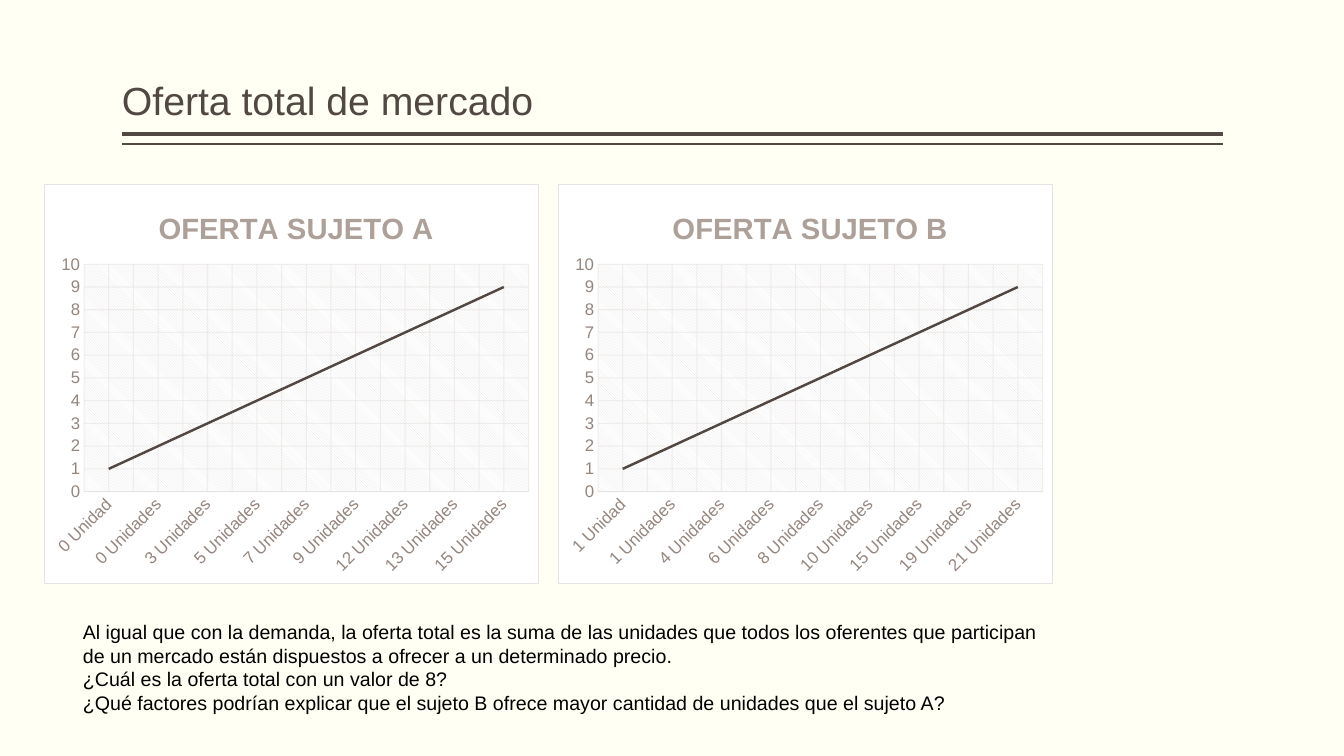
"""Build the slide on total market supply with two supply charts."""
from copy import deepcopy
from dataclasses import dataclass
from typing import Any

from lxml.etree import SubElement
from pptx import Presentation
from pptx.chart.axis import CategoryAxis, ValueAxis
from pptx.chart.chart import Chart
from pptx.chart.data import CategoryChartData
from pptx.dml.color import RGBColor
from pptx.dml.line import LineFormat
from pptx.enum.chart import XL_CHART_TYPE, XL_TICK_MARK
from pptx.enum.shapes import MSO_CONNECTOR
from pptx.enum.text import MSO_ANCHOR, MSO_AUTO_SIZE
from pptx.oxml import parse_xml
from pptx.oxml.ns import nsdecls, qn
from pptx.slide import Slide
from pptx.text.text import Font
from pptx.util import Emu, Pt

EMU_PER_PX = 914400 / 100.8
COLORS = {
    "background": "FFFFF3", "ink": "514843", "body": "000000", "panel": "FFFFFF",
    "grid": "E6E3E1", "axis": "94867E", "chart_title": "ACA099",
}


@dataclass(frozen=True)
class Box:
    left: int
    top: int
    width: int
    height: int

    def emu(self) -> tuple[Emu, ...]:
        return tuple(px(n) for n in (self.left, self.top, self.width, self.height))


@dataclass(frozen=True)
class TextBlock:
    box: Box
    paragraphs: tuple[str, ...]
    size: int
    color: str
    frame: dict[str, Any]
    spacing: float


@dataclass(frozen=True)
class Rule:
    y: int
    weight: int


@dataclass(frozen=True)
class Supply:
    title: str
    left: int
    units: tuple[int, ...]


HEADING = TextBlock(
    Box(122, 8, 1101, 121), ("Oferta total de mercado",), 28, "ink",
    {"vertical_anchor": MSO_ANCHOR.BOTTOM, "margin_left": 0, "margin_right": 0}, 0.9,
)
QUESTIONS = TextBlock(
    Box(73, 615, 981, 105),
    (
        "Al igual que con la demanda, la oferta total es la suma de las unidades que todos "
        "los oferentes que participan de un mercado están dispuestos a ofrecer a un "
        "determinado precio.",
        "¿Cuál es la oferta total con un valor de 8?",
        "¿Qué factores podrían explicar que el sujeto B ofrece mayor cantidad de unidades "
        "que el sujeto A?",
    ),
    14, "body", {"auto_size": MSO_AUTO_SIZE.SHAPE_TO_FIT_TEXT}, 1.0,
)
RULES = (Rule(134, 3), Rule(144, 1))
SUPPLIES = (
    Supply("OFERTA SUJETO A", 44, (0, 0, 3, 5, 7, 9, 12, 13, 15)),
    Supply("OFERTA SUJETO B", 558, (1, 1, 4, 6, 8, 10, 15, 19, 21)),
)


def px(length: int) -> Emu:
    return Emu(round(length * EMU_PER_PX))


def rgb(name: str) -> RGBColor:
    return RGBColor.from_string(COLORS[name])


def apply(target: Any, formats: dict[str, Any]) -> None:
    for attribute, value in formats.items():
        setattr(target, attribute, value)


def style_font(font: Font, size: int, color: str, bold: bool = False) -> None:
    apply(font, {"name": "Arial", "size": Pt(size), "bold": bold})
    font.color.rgb = rgb(color)


def style_line(line: LineFormat, color: str, weight: float) -> None:
    line.color.rgb = rgb(color)
    line.width = Pt(weight)


def add_text(slide: Slide, block: TextBlock) -> None:
    frame = slide.shapes.add_textbox(*block.box.emu()).text_frame
    apply(frame, {"word_wrap": True, **block.frame})
    frame.text = "\n".join(block.paragraphs)
    for paragraph in frame.paragraphs:
        paragraph.line_spacing = block.spacing
        style_font(paragraph.runs[0].font, block.size, block.color)


def add_rule(slide: Slide, rule: Rule) -> None:
    connector = slide.shapes.add_connector(
        MSO_CONNECTOR.STRAIGHT, px(1223), px(rule.y), px(122), px(rule.y))
    style_line(connector.line, "ink", rule.weight)
    SubElement(connector.element.spPr, qn("a:effectLst"))


def place(parent: Any, index: int, values: dict[str, Any]) -> None:
    for layout in parent.findall(qn("c:layout")):
        parent.remove(layout)
    settings = "".join(f'<c:{tag} val="{value}"/>' for tag, value in values.items())
    parent.insert(index, parse_xml(
        f'<c:layout {nsdecls("c")}><c:manualLayout>{settings}</c:manualLayout></c:layout>'))


def style_axis(axis: CategoryAxis | ValueAxis, formats: dict[str, Any]) -> None:
    apply(axis, {"major_tick_mark": XL_TICK_MARK.NONE, "minor_tick_mark": XL_TICK_MARK.NONE,
                 "has_major_gridlines": True, **formats})
    style_font(axis.tick_labels.font, 12, "axis")
    style_line(axis.major_gridlines.format.line, "grid", 0.75)


def fill_areas(chart: Chart) -> None:
    space = chart.element
    space.find(qn("c:txPr")).addprevious(parse_xml(
        f'<c:spPr {nsdecls("c", "a")}>'
        f'<a:solidFill><a:srgbClr val="{COLORS["panel"]}"/></a:solidFill>'
        f'<a:ln w="9525"><a:solidFill><a:srgbClr val="{COLORS["grid"]}"/></a:solidFill></a:ln>'
        '</c:spPr>'))
    plot = space.find(f'{qn("c:chart")}/{qn("c:plotArea")}')
    place(plot, 0, {"layoutTarget": "inner", "xMode": "edge", "yMode": "edge",
                    "x": 0.08, "y": 0.2, "w": 0.9, "h": 0.57})
    plot.append(parse_xml(
        f'<c:spPr {nsdecls("c", "a")}><a:pattFill prst="ltDnDiag">'
        f'<a:fgClr><a:srgbClr val="{COLORS["grid"]}"/></a:fgClr>'
        f'<a:bgClr><a:srgbClr val="{COLORS["panel"]}"/></a:bgClr>'
        '</a:pattFill><a:ln><a:noFill/></a:ln></c:spPr>'))
    for gridlines in space.iter(qn("c:majorGridlines")):
        for color in gridlines.iter(qn("a:srgbClr")):
            SubElement(color, qn("a:alpha")).set("val", "54000")
    for minor in space.iter(qn("c:minorGridlines")):
        major = minor.getparent().find(qn("c:majorGridlines"))
        minor.append(deepcopy(major.find(qn("c:spPr"))))


def add_supply(slide: Slide, supply: Supply) -> None:
    data = CategoryChartData()
    data.categories = ["{} {}".format(amount, "Unidades" if position else "Unidad")
                       for position, amount in enumerate(supply.units)]
    data.add_series("Series 1", range(1, len(supply.units) + 1))
    chart = slide.shapes.add_chart(
        XL_CHART_TYPE.LINE, *Box(supply.left, 184, 495, 400).emu(), data).chart
    style_font(chart.font, 10, "ink")
    apply(chart, {"has_legend": False, "has_title": True})
    chart.chart_title.text_frame.text = supply.title
    style_font(chart.chart_title.text_frame.paragraphs[0].runs[0].font, 21, "chart_title", True)
    place(chart.element.find(f'{qn("c:chart")}/{qn("c:title")}'), 1,
          {"xMode": "edge", "yMode": "edge", "x": 0.22, "y": 0.05})

    style_axis(chart.category_axis, {"has_minor_gridlines": True})
    style_line(chart.category_axis.format.line, "grid", 0.75)
    category_text = chart.element.find(f'.//{qn("c:catAx")}/{qn("c:txPr")}/{qn("a:bodyPr")}')
    category_text.set("rot", "-2700000")
    style_axis(chart.value_axis, {"minimum_scale": 0, "maximum_scale": 10, "major_unit": 1})
    chart.value_axis.format.line.fill.background()

    chart.plots[0].vary_by_categories = False
    prices = chart.plots[0].series[0]
    prices.smooth = False
    style_line(prices.format.line, "ink", 1.75)
    fill_areas(chart)


def main() -> None:
    presentation = Presentation()
    apply(presentation, {"slide_width": px(1344), "slide_height": px(756)})
    slide = presentation.slides.add_slide(presentation.slide_layouts[6])
    slide.background.fill.solid()
    slide.background.fill.fore_color.rgb = rgb("background")
    for rule in RULES:
        add_rule(slide, rule)
    add_text(slide, HEADING)
    for supply in SUPPLIES:
        add_supply(slide, supply)
    add_text(slide, QUESTIONS)
    presentation.save("out.pptx")


if __name__ == "__main__":
    main()
